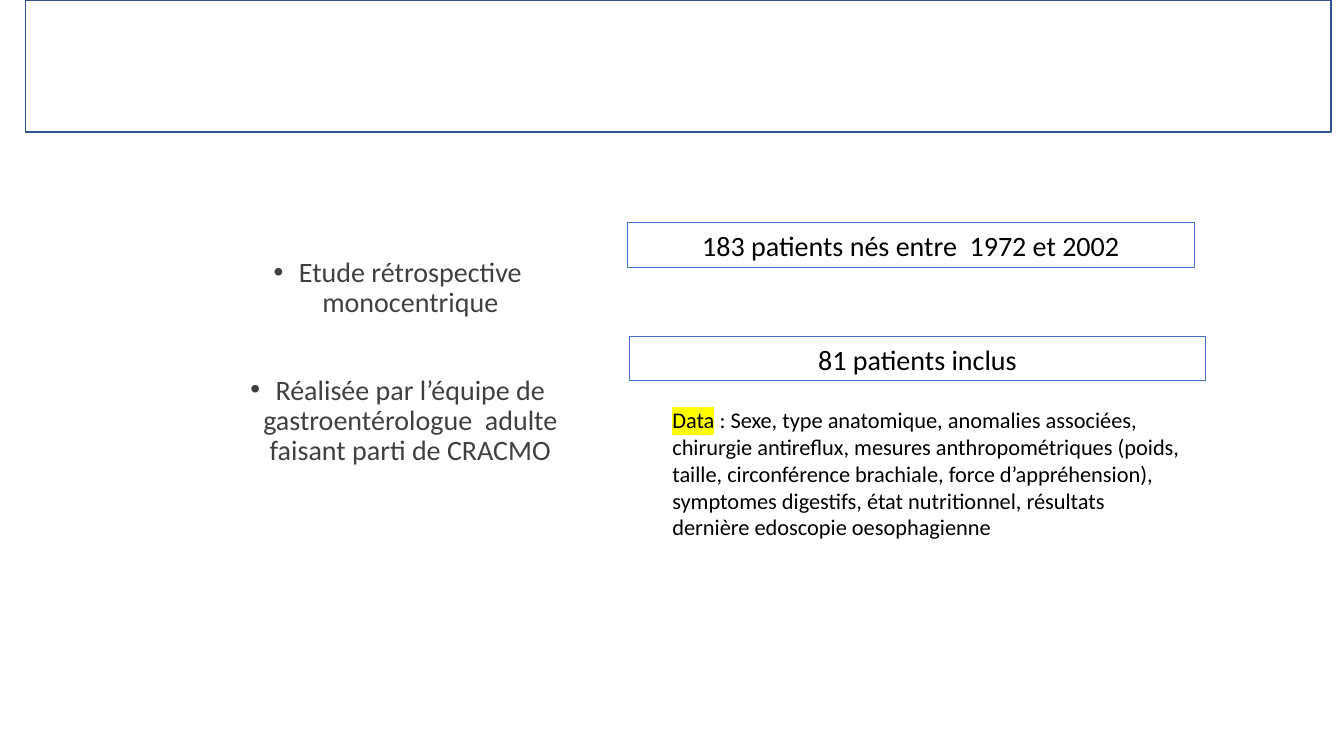
import pptx
import pptx.util
import pptx.dml.color
import pptx.enum.shapes
import pptx.enum.text
import pptx.oxml.ns
import lxml.etree

Inches = pptx.util.Inches
Pt = pptx.util.Pt
qn = pptx.oxml.ns.qn
ALIGN = pptx.enum.text.PP_ALIGN
ANCHOR = pptx.enum.text.MSO_ANCHOR
AUTO_SIZE = pptx.enum.text.MSO_AUTO_SIZE
COLORS = {
    "white": "FFFFFF",
    "black": "000000",
    "gray": "404040",
    "blue": "4472C4",
    "dark_blue": "325491",
    "yellow": "FFFF00",
}


def format_font(font, size, color):
    for name, value in {"name": "Calibri", "size": Pt(size)}.items():
        setattr(font, name, value)
    font.color.rgb = pptx.dml.color.RGBColor.from_string(COLORS[color])


def add_box(left, top, width, height, line_color, line_width):
    box = slide.shapes.add_shape(
        pptx.enum.shapes.MSO_SHAPE.RECTANGLE,
        Inches(left), Inches(top), Inches(width), Inches(height))
    box.shadow.inherit = False
    box.fill.background()
    box.line.color.rgb = pptx.dml.color.RGBColor.from_string(COLORS[line_color])
    box.line.width = Pt(line_width)
    return box


presentation = pptx.Presentation()
presentation.slide_width = Inches(13.33)
presentation.slide_height = Inches(7.5)
slide = presentation.slides.add_slide(presentation.slide_layouts[1])
title = slide.shapes.title
title.element.getparent().remove(title.element)

study = slide.placeholders[1]
study_place = {"left": 1.87, "top": 2.51, "width": 4.15, "height": 3.15}
for name, value in study_place.items():
    setattr(study, name, Inches(value))
study_frame = study.text_frame
study_format = {"word_wrap": True, "auto_size": AUTO_SIZE.NONE, "vertical_anchor": ANCHOR.TOP}
for name, value in study_format.items():
    setattr(study_frame, name, value)
study_points = [
    ("Etude rétrospective monocentrique", 0),
    ("Réalisée par l’équipe de gastroentérologue  adulte faisant parti de CRACMO", 41),
]
for index, (text, space_before) in enumerate(study_points):
    paragraph = study_frame.paragraphs[0] if index == 0 else study_frame.add_paragraph()
    properties = paragraph._p.get_or_add_pPr()
    properties.set("marL", str(Inches(0.25)))
    properties.set("indent", str(Inches(-0.25)))
    lxml.etree.SubElement(properties, qn("a:buFont")).set("typeface", "Arial")
    lxml.etree.SubElement(properties, qn("a:buChar")).set("char", "•")
    paragraph_format = {
        "alignment": ALIGN.CENTER, "line_spacing": 0.9, "space_before": Pt(space_before)}
    for name, value in paragraph_format.items():
        setattr(paragraph, name, value)
    run = paragraph.add_run()
    run.text = text
    format_font(run.font, 20, "gray")

patient_counts = [
    (6.22, 2.21, 5.63, "183 patients nés entre  1972 et 2002"),
    (6.24, 3.34, 5.72, "81 patients inclus"),
]
for left, top, width, text in patient_counts:
    box = add_box(left, top, width, 0.44, "blue", 0.75)
    box.text_frame.word_wrap = True
    paragraph = box.text_frame.paragraphs[0]
    paragraph.alignment = ALIGN.CENTER
    run = paragraph.add_run()
    run.text = text
    format_font(run.font, 20, "black")

data_box = slide.shapes.add_textbox(Inches(6.57), Inches(3.98), Inches(5.27), Inches(1.45))
data_frame = data_box.text_frame
data_frame.word_wrap = True
data_paragraphs = [
    ["Data", " : Sexe, type anatomique, anomalies associées, chirurgie antireflux, "
     "mesures anthropométriques (poids, taille, circonférence brachiale, "
     "force d’appréhension),"],
    ["symptomes digestifs, état nutritionnel, résultats dernière edoscopie oesophagienne"],
]
for index, texts in enumerate(data_paragraphs):
    paragraph = data_frame.paragraphs[0] if index == 0 else data_frame.add_paragraph()
    for text in texts:
        run = paragraph.add_run()
        run.text = text
        format_font(run.font, 16, "black")

data_label = data_frame.paragraphs[0].runs[0]
highlight = lxml.etree.Element(qn("a:highlight"))
lxml.etree.SubElement(highlight, qn("a:srgbClr")).set("val", COLORS["yellow"])
data_label._r.rPr.find(qn("a:latin")).addprevious(highlight)

banner = add_box(0.25, 0, 12.95, 1.31, "dark_blue", 1)
banner.fill.solid()
banner.fill.fore_color.rgb = pptx.dml.color.RGBColor.from_string(COLORS["white"])

presentation.save("out.pptx")
